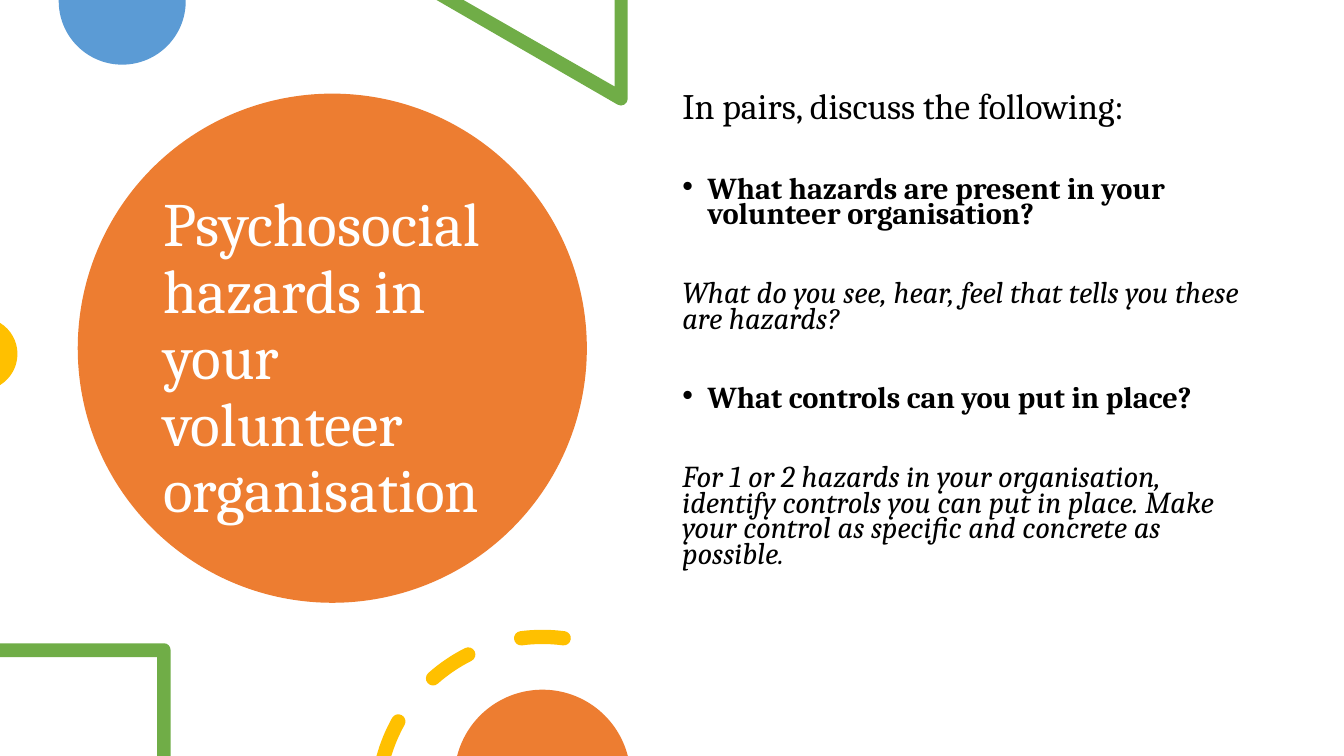
from dataclasses import dataclass
from math import asin, cos, degrees, radians, sin, tan

from lxml.etree import SubElement
from pptx import Presentation
from pptx.dml.color import RGBColor
from pptx.enum.shapes import MSO_SHAPE
from pptx.enum.text import MSO_ANCHOR, MSO_AUTO_SIZE, PP_ALIGN
from pptx.oxml.ns import qn
from pptx.util import Cm, Pt

WIDTH, HEIGHT = 33.87, 19.05


@dataclass(frozen=True)
class Theme:
    font: str = "Cambria"
    white: str = "FFFFFF"
    black: str = "000000"
    orange: str = "ED7D31"
    blue: str = "5B9BD5"
    green: str = "70AD47"
    yellow: str = "FFC000"
    title_size: float = 44
    intro_size: float = 25.6
    question_size: float = 21.7
    title_spacing: float = 0.9
    body_spacing: float = 0.7
    first_gap: float = 10
    paragraph_gap: float = 38.3
    bullet_indent: float = 0.64


def lines(*points):
    """Straight steps of an outline: one point each."""
    return [[point] for point in points]


def arc(center_x, center_y, radius, start, end, pieces=1):
    """A line to the arc's start, then Bezier steps; degrees run clockwise from the right."""
    def at(angle, offset=0):
        a = radians(angle)
        return (center_x + radius * (cos(a) - offset * sin(a)),
                center_y + radius * (sin(a) + offset * cos(a)))

    sweep = (end - start) / pieces
    handle = 4 / 3 * tan(radians(sweep) / 4)
    angles = [start + sweep * i for i in range(pieces + 1)]
    return [[at(start)]] + [[at(a, handle), at(b, -handle), at(b)]
                            for a, b in zip(angles, angles[1:])]


def round_dash(center_x, center_y, radius, half_width, end, start=None):
    """Curved dash with round ends; without a start it runs off the lower edge."""
    outer, inner = radius + half_width, radius - half_width

    def begin(r):
        return 180 + degrees(asin((center_y - HEIGHT) / r)) if start is None else start

    def cap(angle, turn):
        x = center_x + radius * cos(radians(angle))
        y = center_y + radius * sin(radians(angle))
        return arc(x, y, half_width, turn, turn + 180, 2)[1:]

    dash = (arc(center_x, center_y, outer, begin(outer), end) + cap(end, end)
            + arc(center_x, center_y, inner, end, begin(inner))[1:])
    return dash if start is None else dash + cap(start, start + 180)


class SlideBuilder:
    def __init__(self, slide, theme):
        self.slide = slide
        self.theme = theme

    def paint(self, shape, color):
        shape.shadow.inherit = False
        shape.fill.solid()
        shape.fill.fore_color.rgb = RGBColor.from_string(color)
        shape.line.fill.background()

    def circle(self, left, top, diameter, color):
        disc = self.slide.shapes.add_shape(
            MSO_SHAPE.OVAL, Cm(left), Cm(top), Cm(diameter), Cm(diameter))
        self.paint(disc, color)

    def outline(self, contours, color):
        """Freeform from contours whose steps hold one point (line) or three (curve)."""
        builder = None
        for contour in contours:
            first, *rest = [(Cm(x), Cm(y)) for step in contour for x, y in step]
            if builder is None:
                builder = self.slide.shapes.build_freeform(*first)
            else:
                builder.move_to(*first)
            builder.add_line_segments(rest, close=True)
        shape = builder.convert_to_shape()
        route = shape.element.find(".//" + qn("a:path"))
        nodes = iter([node for node in route if node.tag != qn("a:close")])
        for step in (step for contour in contours for step in contour):
            curve, *others = [next(nodes) for _ in step]
            if others:
                curve.tag = qn("a:cubicBezTo")
            for node in others:
                curve.append(node[0])
                route.remove(node)
        self.paint(shape, color)

    def place(self, placeholder, left, top, width, height, anchor):
        """Position a placeholder, bring it to the front and return its text frame."""
        placeholder.left, placeholder.top = Cm(left), Cm(top)
        placeholder.width, placeholder.height = Cm(width), Cm(height)
        self.slide.shapes.element.append(placeholder.element)
        frame = placeholder.text_frame
        frame.word_wrap = True
        frame.auto_size = MSO_AUTO_SIZE.NONE
        frame.vertical_anchor = anchor
        return frame

    def run(self, paragraph, wording, size, color, bold=False, italic=False):
        run = paragraph.add_run()
        run.text = wording
        font = run.font
        font.name, font.size = self.theme.font, Pt(size)
        font.bold, font.italic = bold, italic
        font.color.rgb = RGBColor.from_string(color)

    def title(self, wording, *box):
        frame = self.place(self.slide.shapes.title, *box, MSO_ANCHOR.MIDDLE)
        heading = frame.paragraphs[0]
        heading.alignment = PP_ALIGN.LEFT
        heading.line_spacing = self.theme.title_spacing
        self.run(heading, wording, self.theme.title_size, self.theme.white)

    def body(self, intro, questions, *box):
        """An intro line, then each bold bulleted question with its italic prompt."""
        theme = self.theme
        frame = self.place(self.slide.placeholders[1], *box, MSO_ANCHOR.TOP)
        opening = frame.paragraphs[0]
        self.format_paragraph(opening, theme.first_gap)
        self.run(opening, intro, theme.intro_size, theme.black)
        for question, prompt in questions:
            for wording, is_question in ((question, True), (prompt, False)):
                paragraph = frame.add_paragraph()
                self.format_paragraph(paragraph, theme.paragraph_gap, is_question)
                self.run(paragraph, wording, theme.question_size, theme.black,
                         bold=is_question, italic=not is_question)

    def format_paragraph(self, paragraph, gap, bulleted=False):
        paragraph.alignment = PP_ALIGN.LEFT
        paragraph.line_spacing = self.theme.body_spacing
        paragraph.space_before = Pt(gap)
        paragraph.space_after = Pt(0)
        indent = Cm(self.theme.bullet_indent) if bulleted else 0
        properties = paragraph._p.get_or_add_pPr()
        properties.set("marL", str(indent))
        properties.set("indent", str(-indent))
        if bulleted:
            SubElement(properties, qn("a:buFont"), typeface="Arial")
            SubElement(properties, qn("a:buChar"), char="•")
        else:
            SubElement(properties, qn("a:buNone"))


def main():
    theme = Theme()
    deck = Presentation()
    deck.slide_width, deck.slide_height = Cm(WIDTH), Cm(HEIGHT)
    page = SlideBuilder(deck.slides.add_slide(deck.slide_layouts[1]), theme)

    page.circle(1.96, 2.36, 12.83, theme.orange)
    page.outline([arc(3.08, 0.03, 1.6, -1, 181, 2)], theme.blue)
    triangle = (lines((15.82, 0), (15.49, 0), (15.49, 2.18), (11.68, 0), (11, 0))
                + arc(15.65, 2.49, 0.17, 120, 0, 2))
    page.outline([triangle], theme.green)
    page.outline([arc(-0.48, 8.92, 0.92, -58.3, 58.3, 2)], theme.yellow)
    frame_corner = (lines((0, 16.21)) + arc(4.13, 16.38, 0.17, 270, 360)
                    + lines((4.3, HEIGHT), (3.96, HEIGHT), (3.96, 16.56), (0, 16.56)))
    page.outline([frame_corner], theme.green)
    ring = (13.67, 20.21, 4.16, 0.18)
    dashes = [round_dash(*ring, 209.2),
              round_dash(*ring, 243.3, 228.5),
              round_dash(*ring, 277.4, 262.6)]
    page.outline(dashes, theme.yellow)
    page.outline([arc(13.67, 19.6, 2.22, 194.4, 345.6, 2)], theme.orange)

    page.title("Psychosocial hazards in your volunteer organisation",
               3.86, 3.42, 8.99, 11.3)
    page.body(
        "In pairs, discuss the following:",
        [("What hazards are present in your volunteer organisation?",
          "What do you see, hear, feel that tells you these are hazards?"),
         ("What controls can you put in place?",
          "For 1 or 2 hazards in your organisation, identify controls you can put "
          "in place. Make your control as specific and concrete as possible.")],
        16.94, 2.27, 14.61, 13.59)
    deck.save("out.pptx")


if __name__ == "__main__":
    main()
